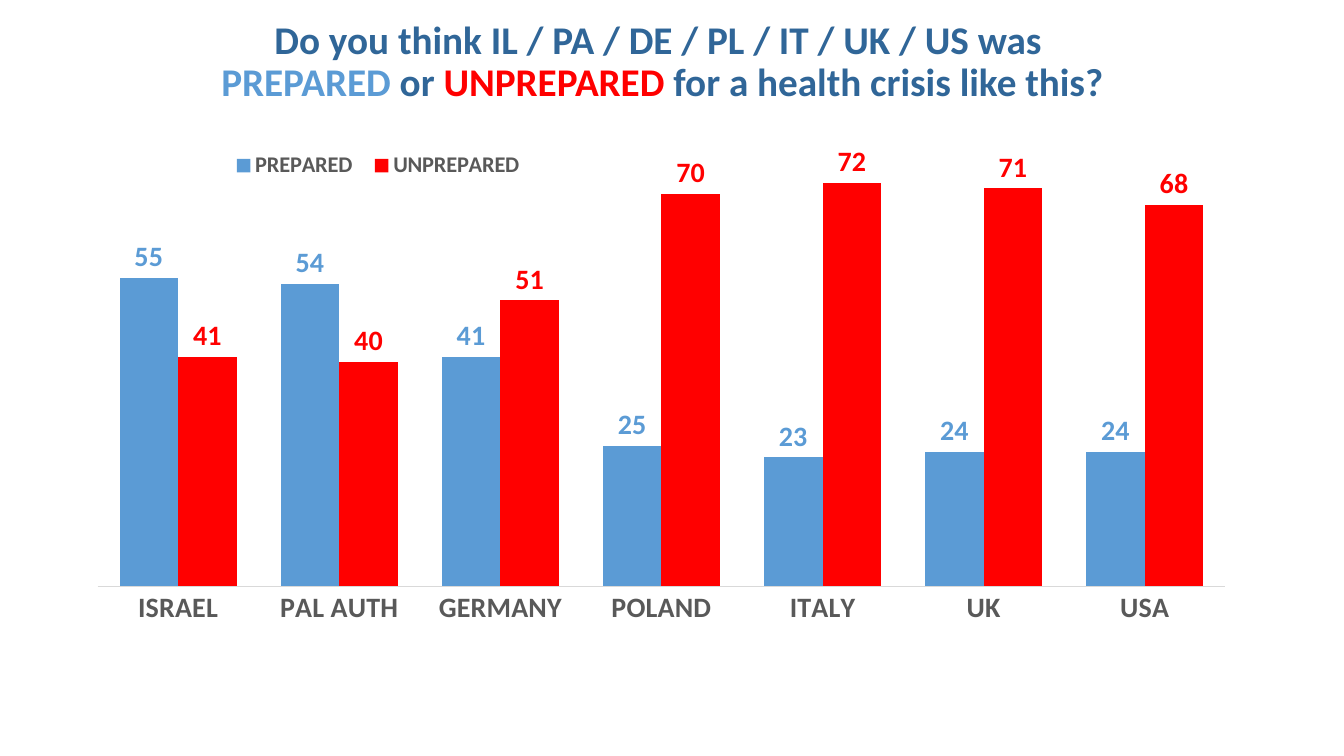
import lxml.etree
import pptx
import pptx.chart.data
import pptx.dml.color
import pptx.enum.chart
import pptx.enum.text
import pptx.oxml.ns
import pptx.util

Cm = pptx.util.Cm
Pt = pptx.util.Pt
RGBColor = pptx.dml.color.RGBColor
qn = pptx.oxml.ns.qn

NAVY = RGBColor(0x30, 0x66, 0x98)
BLUE = RGBColor(0x5B, 0x9B, 0xD5)
RED = RGBColor(0xFF, 0x00, 0x00)
GREY = RGBColor(0x59, 0x59, 0x59)
LIGHT_GREY = RGBColor(0xD9, 0xD9, 0xD9)

TITLE_LINES = [
    [("Do you think IL / PA / DE / PL / IT / UK / US was ", NAVY)],
    [("PREPARED", BLUE), (" or ", NAVY), ("UNPREPARED", RED),
     (" for a health crisis like this?", NAVY)],
]
COUNTRIES = ["ISRAEL", "PAL AUTH", "GERMANY", "POLAND", "ITALY", "UK", "USA"]
ANSWERS = [
    ("PREPARED", [55, 54, 41, 25, 23, 24, 24], BLUE),
    ("UNPREPARED", [41, 40, 51, 70, 72, 71, 68], RED),
]


def set_attributes(target, values):
    for name, value in values.items():
        setattr(target, name, value)


def format_font(font, size, color):
    set_attributes(font, {"name": "Calibri", "size": Pt(size), "bold": True})
    font.color.rgb = color


def build_layout(values):
    layout = lxml.etree.Element(qn("c:layout"))
    manual = lxml.etree.SubElement(layout, qn("c:manualLayout"))
    for name, value in values.items():
        lxml.etree.SubElement(manual, qn(f"c:{name}")).set("val", str(value))
    return layout


def remove_layout(element):
    for layout in element.findall(qn("c:layout")):
        element.remove(layout)


def add_title(slide, left, top, width, height):
    title = slide.shapes.title
    set_attributes(title, {"left": left, "top": top, "width": width, "height": height})
    set_attributes(title.text_frame, {
        "word_wrap": True,
        "auto_size": pptx.enum.text.MSO_AUTO_SIZE.NONE,
        "vertical_anchor": pptx.enum.text.MSO_ANCHOR.MIDDLE,
    })
    paragraph = title.text_frame.paragraphs[0]
    set_attributes(paragraph, {
        "alignment": pptx.enum.text.PP_ALIGN.CENTER, "line_spacing": 0.9,
    })
    for index, line in enumerate(TITLE_LINES):
        if index:
            paragraph.add_line_break()
        for text, color in line:
            run = paragraph.add_run()
            run.text = text
            format_font(run.font, 28, color)


def format_axes(chart):
    set_attributes(chart.value_axis, {
        "visible": False, "has_major_gridlines": False,
        "minimum_scale": 0, "maximum_scale": 80,
    })
    axis = chart.category_axis
    set_attributes(axis, {
        "major_tick_mark": pptx.enum.chart.XL_TICK_MARK.NONE,
        "minor_tick_mark": pptx.enum.chart.XL_TICK_MARK.NONE,
        "has_major_gridlines": False,
    })
    format_font(axis.tick_labels.font, 20, GREY)
    axis.format.line.color.rgb = LIGHT_GREY
    axis.format.line.width = Pt(0.75)


def format_series(plot):
    set_attributes(plot, {"gap_width": 75, "overlap": 0, "vary_by_categories": False})
    for series, (_, _, color) in zip(plot.series, ANSWERS):
        series.invert_if_negative = False
        series.format.fill.solid()
        series.format.fill.fore_color.rgb = color
        set_attributes(series.data_labels, {
            "show_value": True,
            "position": pptx.enum.chart.XL_LABEL_POSITION.OUTSIDE_END,
        })
        format_font(series.data_labels.font, 20, color)


def format_legend(chart):
    chart.has_legend = True
    legend = chart.legend
    set_attributes(legend, {
        "position": pptx.enum.chart.XL_LEGEND_POSITION.BOTTOM,
        "include_in_layout": False,
    })
    format_font(legend.font, 16, GREY)
    element = chart.element.find(f".//{qn('c:legend')}")
    remove_layout(element)
    element.find(qn("c:legendPos")).addnext(build_layout({
        "xMode": "edge", "yMode": "edge", "x": 0.12, "y": 0.07, "w": 0.27, "h": 0.06,
    }))


def add_answer_chart(slide, left, top, width, height):
    chart_data = pptx.chart.data.CategoryChartData()
    chart_data.categories = COUNTRIES
    for name, values, _ in ANSWERS:
        chart_data.add_series(name, values)
    chart = slide.shapes.add_chart(
        pptx.enum.chart.XL_CHART_TYPE.COLUMN_CLUSTERED,
        left, top, width, height, chart_data).chart
    chart.has_title = False
    chart.font.name = "Calibri"
    chart.font.size = Pt(10)
    format_axes(chart)
    format_series(chart.plots[0])
    format_legend(chart)
    plot_area = chart.element.find(f".//{qn('c:plotArea')}")
    remove_layout(plot_area)
    plot_area.insert(0, build_layout({
        "layoutTarget": "inner", "xMode": "edge", "yMode": "edge",
        "x": 0.013, "y": 0.052, "w": 0.973, "h": 0.778,
    }))


def main():
    presentation = pptx.Presentation()
    set_attributes(presentation, {"slide_width": Cm(33.87), "slide_height": Cm(19.05)})
    slide = presentation.slides.add_slide(presentation.slide_layouts[5])
    add_title(slide, Cm(1.83), Cm(0.46), Cm(29.72), Cm(2.26))
    add_answer_chart(slide, Cm(2.08), Cm(2.72), Cm(29.21), Cm(14.53))
    presentation.save("out.pptx")


if __name__ == "__main__":
    main()
